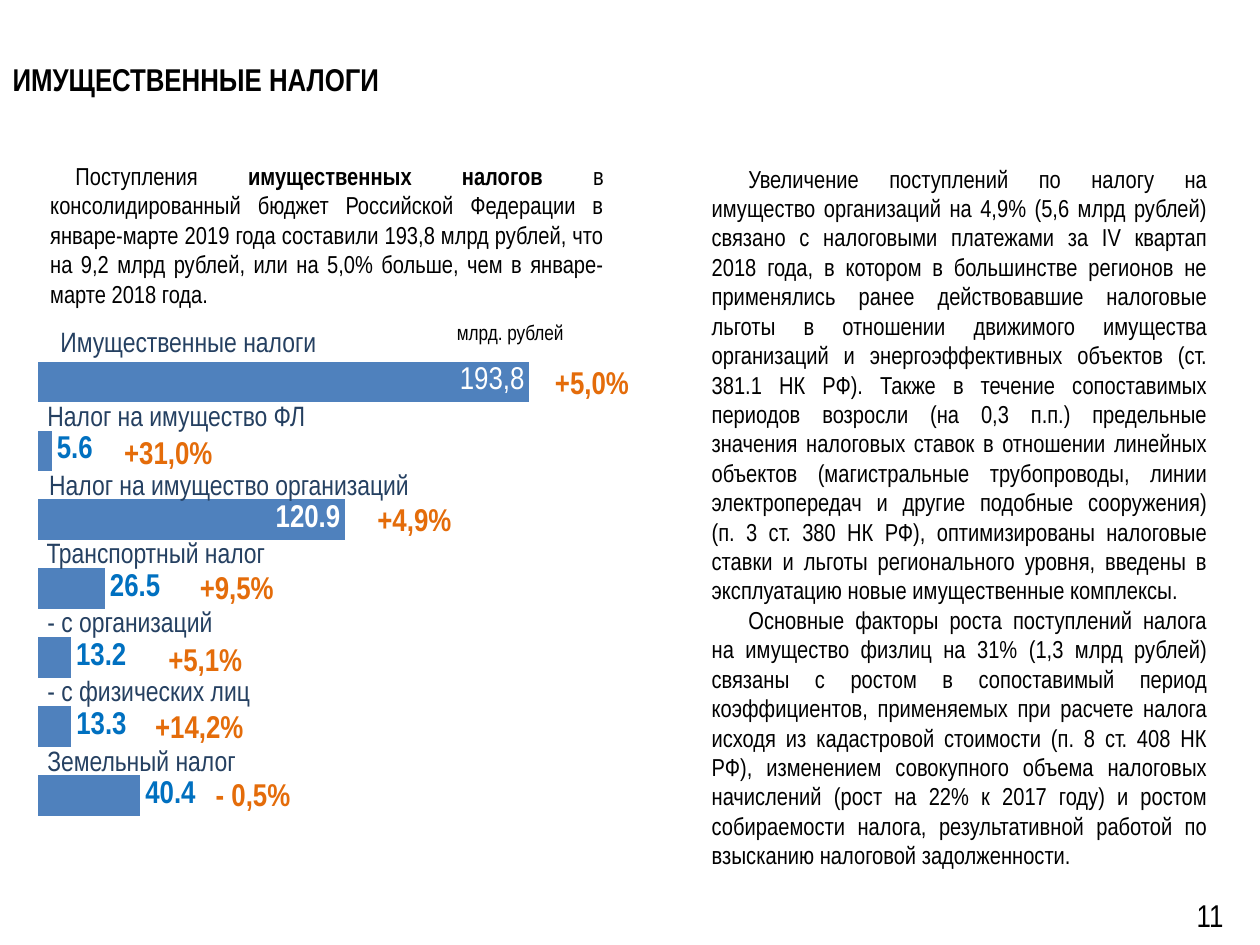
from lxml import etree
from pptx import Presentation
from pptx.chart.data import CategoryChartData
from pptx.dml.color import RGBColor
from pptx.enum.chart import XL_CHART_TYPE as ChartType, XL_LABEL_POSITION as LabelPosition
from pptx.enum.text import MSO_ANCHOR as Anchor, PP_ALIGN as Align
from pptx.util import Pt

FONT = "Arial Narrow"
BLACK, WHITE, NAVY, ORANGE = "000000", "FFFFFF", "254061", "E46C0A"
BAR_BLUE, VALUE_BLUE = "4F81BD", "0070C0"


def style_font(font, size, color, bold=False):
    font.name = FONT
    font.size = Pt(size)
    font.bold = bold
    font.color.rgb = RGBColor.from_string(color)


def add_text(box, paragraphs, size, color, bold=False, align=Align.LEFT, anchor=Anchor.TOP, indent=0):
    left, top, width, height = box
    shape = slide.shapes.add_textbox(Pt(left), Pt(top), Pt(width), Pt(height))
    frame = shape.text_frame
    frame.word_wrap = True
    frame.vertical_anchor = anchor
    for number, runs in enumerate(paragraphs):
        paragraph = frame.add_paragraph() if number else frame.paragraphs[0]
        paragraph.alignment = align
        if indent:
            paragraph._p.get_or_add_pPr().set("indent", str(Pt(indent)))
        for text, emphasis in runs:
            if text == "\n":
                paragraph.add_line_break()
                continue
            run = paragraph.add_run()
            run.text = text
            style_font(run.font, size, color, bold or emphasis)
    return frame


presentation = Presentation()
presentation.slide_width = Pt(720)
presentation.slide_height = Pt(540)
slide = presentation.slides.add_slide(presentation.slide_layouts[5])

title = slide.shapes.title
title.left, title.top, title.width, title.height = Pt(0), Pt(0), Pt(648), Pt(90)
title.text_frame.vertical_anchor = Anchor.MIDDLE
paragraph = title.text_frame.paragraphs[0]
paragraph.alignment = Align.LEFT
run = paragraph.add_run()
run.text = "ИМУЩЕСТВЕННЫЕ НАЛОГИ"
style_font(run.font, 18, BLACK, True)

summary = [
    ("Поступления ", False),
    ("имущественных налогов ", True),
    ("в консолидированный бюджет Российской Федерации в январе-марте 2019 года "
     "составили 193,8 млрд рублей, что на 9,2 млрд рублей, или на 5,0% больше, "
     "чем в январе-марте 2018 года.", False),
]
add_text((21.6, 88.5, 330.5, 92), [summary], 14, BLACK, align=Align.JUSTIFY, indent=14.4)

organizations = [
    ("Увеличение поступлений по налогу на имущество организаций на 4,9% "
     "(5,6 млрд рублей) связано с налоговыми платежами за IV квартап 2018 года, "
     "в котором в большинстве регионов не применялись ранее действовавшие налоговые "
     "льготы в отношении движимого имущества организаций и энергоэффективных объектов "
     "(ст. 381.1 НК РФ). Также в течение сопоставимых периодов возросли (на 0,3 п.п.) "
     "предельные значения налоговых ставок в отношении линейных объектов "
     "(магистральные трубопроводы, линии электропередач и другие подобные сооружения)", False),
    ("\n", False),
    ("(п. 3 ст. 380 НК РФ), оптимизированы налоговые ставки и льготы регионального "
     "уровня, введены в эксплуатацию новые имущественные комплексы.", False),
]
individuals = [
    ("Основные факторы роста поступлений налога на имущество физлиц на 31% "
     "(1,3 млрд рублей) связаны с ростом в сопоставимый период коэффициентов, "
     "применяемых при расчете налога исходя из кадастровой стоимости "
     "(п. 8 ст. 408 НК РФ), изменением совокупного объема налоговых начислений "
     "(рост на 22% к 2017 году) и ростом собираемости налога, результативной работой "
     "по взысканию налоговой задолженности.", False),
]
add_text((399.6, 90, 297.4, 415), [organizations, individuals], 14, BLACK,
         align=Align.JUSTIFY, indent=21)

chart_data = CategoryChartData()
chart_data.categories = ["1", "2", "3", "4", "5", "6", "7"]
chart_data.add_series("Series 1", [40.4, 13.3, 13.2, 26.5, 120.9, 5.6, 193.3])
chart = slide.shapes.add_chart(ChartType.BAR_CLUSTERED, Pt(11.5), Pt(180.7),
                               Pt(399.6), Pt(304.6), chart_data).chart
chart.has_legend = False
chart.has_title = False
chart.font.name = "Calibri"
chart.font.size = Pt(18)
chart.category_axis.visible = False
chart.value_axis.visible = False
chart.value_axis.has_major_gridlines = False
chart.value_axis.minimum_scale = 0
chart.value_axis.maximum_scale = 250

plot = chart.plots[0]
plot.gap_width = 69
plot.vary_by_categories = False
series = plot.series[0]
series.format.fill.solid()
series.format.fill.fore_color.rgb = RGBColor.from_string(BAR_BLUE)
labels = series.data_labels
labels.show_value = True
labels.position = LabelPosition.INSIDE_END
style_font(labels.font, 18, WHITE, True)
for index in (0, 1, 2, 3, 5):
    label = series.points[index].data_label
    style_font(label.font, 18, VALUE_BLUE, True)
    label.position = LabelPosition.OUTSIDE_END
total_label = series.points[6].data_label
run = total_label.text_frame.paragraphs[0].add_run()
run.text = "193,8"
style_font(run.font, 18, WHITE)
total_label.position = LabelPosition.INSIDE_END

plot_area = chart._chartSpace.chart.plotArea
namespace = plot_area.nsmap["c"]
for old_layout in plot_area.findall(f"{{{namespace}}}layout"):
    plot_area.remove(old_layout)
layout = etree.Element(f"{{{namespace}}}layout")
manual = etree.SubElement(layout, f"{{{namespace}}}manualLayout")
for tag, value in (("layoutTarget", "inner"), ("xMode", "edge"), ("yMode", "edge"),
                   ("x", "0.025"), ("y", "0.059"), ("w", "0.91"), ("h", "0.905")):
    etree.SubElement(manual, f"{{{namespace}}}{tag}").set("val", value)
plot_area.insert(0, layout)

add_text((254, 179.3, 86, 21.6), [[("млрд. рублей", False)]], 12, BLACK, anchor=Anchor.MIDDLE)

taxes = [
    ("Имущественные налоги", 27.4, 181.5, "+5,0%", 366.5, 203.8),
    ("Налог на имущество ФЛ", 20, 224, "+31,0%", 128.5, 244),
    ("Налог на имущество организаций", 21, 263.5, "+4,9%", 265, 282.2),
    ("Транспортный налог", 19.5, 302.5, "+9,5%", 163.5, 321),
    ("- с организаций", 20, 342, "+5,1%", 145.5, 362),
    ("- с физических лиц", 20, 381, "+14,2%", 146.2, 400.3),
    ("Земельный налог", 20, 421, "- 0,5%", 173, 439.2),
]
growth_width = 72
for name, name_left, name_top, growth, growth_right, growth_top in taxes:
    add_text((name_left, name_top, 276, 26.6), [[(name, False)]], 16, NAVY, anchor=Anchor.MIDDLE)
    add_text((growth_right - growth_width, growth_top, growth_width, 28.8),
             [[(growth, False)]], 18, ORANGE, True, Align.RIGHT)

page_number = add_text((663, 491, 57, 54.7), [[("11", False)]], 18, BLACK,
                       align=Align.CENTER, anchor=Anchor.MIDDLE)
page_number.paragraphs[0].line_spacing = Pt(30.1)

presentation.save("out.pptx")
